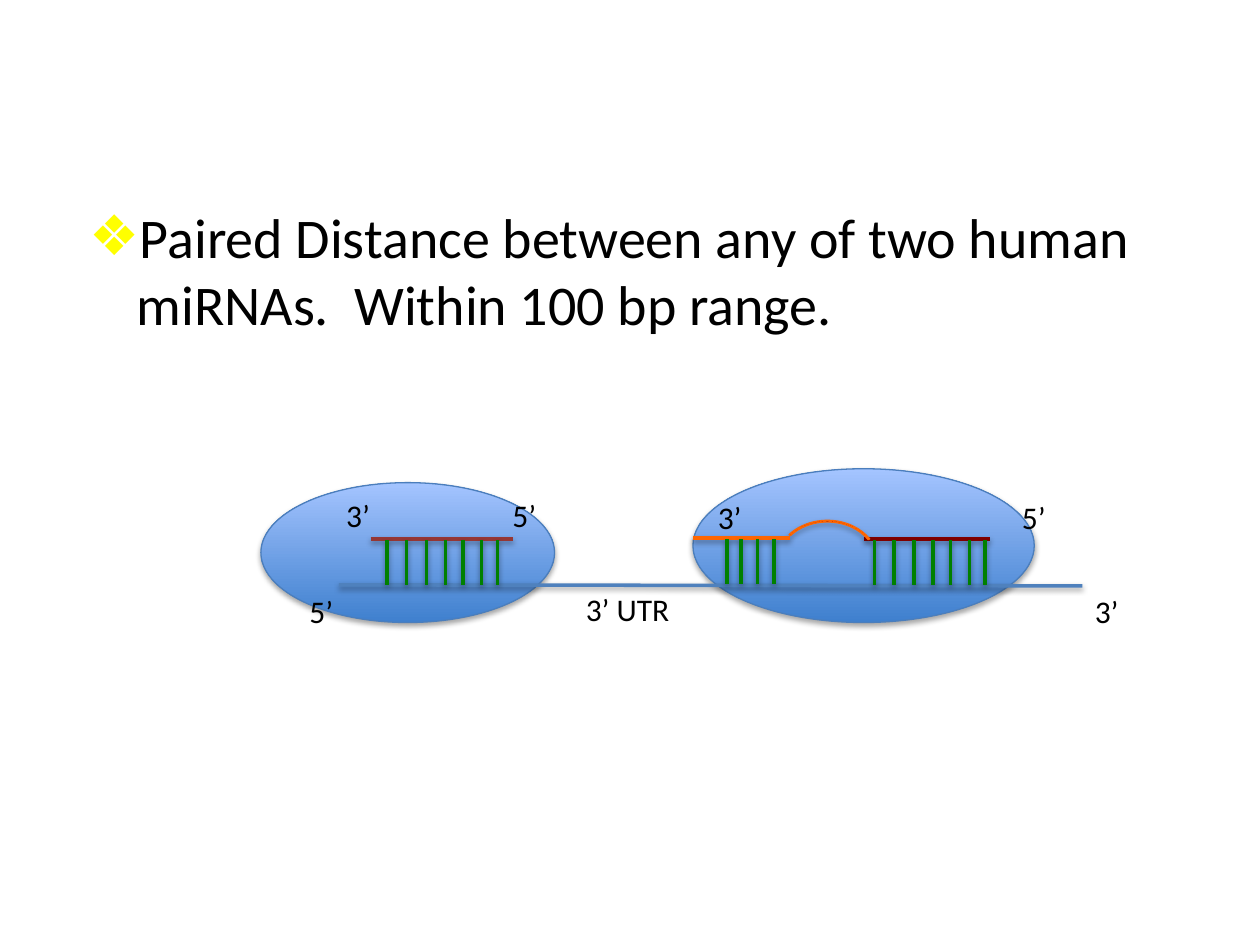
from lxml import etree
from pptx import Presentation
from pptx import util as u
from pptx.dml.color import RGBColor
from pptx.enum import shapes, text
from pptx.oxml import parse_xml
from pptx.oxml.ns import nsdecls, qn

BLACK = RGBColor(0x00, 0x00, 0x00)
OVAL_BOTTOM = RGBColor(0x3F, 0x80, 0xCE)
OVAL_TOP = RGBColor(0xA4, 0xC4, 0xFF)
OVAL_EDGE = RGBColor(0x4B, 0x7E, 0xBC)
UTR_BLUE = RGBColor(0x4F, 0x81, 0xBD)
BROWN = RGBColor(0x95, 0x37, 0x35)
MAROON = RGBColor(0x80, 0x00, 0x00)
ORANGE = RGBColor(0xFF, 0x66, 0x00)
GREEN = RGBColor(0x00, 0x80, 0x00)

FONT = "Calibri"
PAIR_HEIGHT = 0.9
LONG_PAIRING = (0, 0.39, 0.8, 1.18, 1.53, 1.91, 2.23)
SHORT_PAIRING = (0, 0.28, 0.61, 0.94)


def cast_shadow(part, opacity, distance):
    part._element.spPr.append(parse_xml(
        f'<a:effectLst {nsdecls("a")}>'
        f'<a:outerShdw blurRad="40000" dist="{distance}" dir="5400000" rotWithShape="0">'
        f'<a:srgbClr val="000000"><a:alpha val="{opacity}000"/></a:srgbClr>'
        '</a:outerShdw></a:effectLst>'))


def draw_line(slide, start, end, color):
    line = slide.shapes.add_connector(
        shapes.MSO_CONNECTOR.STRAIGHT, *(u.Cm(value) for value in (*start, *end)))
    line.line.color.rgb = color
    line.line.width = u.Pt(2)
    cast_shadow(line, 38, 20000)


def add_run(paragraph, words, size):
    run = paragraph.add_run()
    run.text = words
    run.font.name = FONT
    run.font.size = u.Pt(size)
    run.font.color.rgb = BLACK


def draw_label(slide, left, top, words, width=1.47):
    label = slide.shapes.add_textbox(u.Cm(left), u.Cm(top), u.Cm(width), u.Cm(1.02))
    frame = label.text_frame
    frame.word_wrap = True
    frame.auto_size = text.MSO_AUTO_SIZE.SHAPE_TO_FIT_TEXT
    add_run(frame.paragraphs[0], words, 18)


def write_statement(slide, left, top, width, height):
    statement = slide.placeholders[1]
    statement.left, statement.top = u.Cm(left), u.Cm(top)
    statement.width, statement.height = u.Cm(width), u.Cm(height)
    paragraph = statement.text_frame.paragraphs[0]
    add_run(paragraph, "Paired Distance between any of two human miRNAs.  Within 100 bp range.", 32)
    properties = paragraph._p.get_or_add_pPr()
    properties.set("marL", str(u.Cm(0.95)))
    properties.set("indent", str(u.Cm(-0.95)))
    bullet_color = etree.SubElement(properties, qn("a:buClr"))
    etree.SubElement(bullet_color, qn("a:srgbClr"), val="FFFF00")
    etree.SubElement(properties, qn("a:buChar"), char="❖")


def draw_complex(slide, left, top, width, height):
    oval = slide.shapes.add_shape(
        shapes.MSO_SHAPE.OVAL, u.Cm(left), u.Cm(top), u.Cm(width), u.Cm(height))
    oval.fill.gradient()
    oval.fill.gradient_angle = 90
    for stop, color, position in zip(oval.fill.gradient_stops, (OVAL_BOTTOM, OVAL_TOP), (0, 1)):
        stop.color.rgb = color
        stop.position = position
    oval.line.color.rgb = OVAL_EDGE
    oval.line.width = u.Pt(0.75)
    cast_shadow(oval, 35, 23000)


def draw_utr(slide, left, top, width):
    draw_line(slide, (left, top), (left + width, top + 0.02), UTR_BLUE)
    draw_label(slide, left - 0.84, top + 0.02, "5’")
    draw_label(slide, left + 4.73, top - 0.03, "3’ UTR", 3.1)
    draw_label(slide, left + width, top + 0.02, "3’")


def draw_pairing(slide, left, top, width, color, first_pair, offsets):
    draw_line(slide, (left, top), (left + width, top), color)
    for offset in offsets:
        x = left + first_pair + offset
        draw_line(slide, (x, top + 0.02), (x, top + 0.02 + PAIR_HEIGHT), GREEN)


def draw_bulge(slide, left, top, width, height):
    bulge = slide.shapes.add_shape(
        shapes.MSO_SHAPE.BLOCK_ARC, u.Cm(left), u.Cm(top), u.Cm(width), u.Cm(height))
    for index, value in enumerate((129.66, 198.51, 0.02)):
        bulge.adjustments[index] = value
    bulge.fill.solid()
    bulge.fill.fore_color.rgb = MAROON
    bulge.line.color.rgb = ORANGE
    bulge.line.width = u.Pt(0.75)
    cast_shadow(bulge, 35, 23000)


def draw_first_mirna(slide, left, top, width):
    draw_pairing(slide, left, top, width, BROWN, 0.33, LONG_PAIRING)
    draw_label(slide, left - 0.74, top - 0.99, "3’")
    draw_label(slide, left + width - 0.26, top - 0.99, "5’")


def draw_second_mirna(slide, left, top, width):
    seed_left = left + 3.45
    draw_pairing(slide, seed_left, top, width - 3.45, MAROON, 0.21, LONG_PAIRING)
    draw_label(slide, left + width + 0.39, top - 0.96, "5’")
    draw_label(slide, left + 0.25, top - 0.96, "3’")
    draw_bulge(slide, left + 1.68, top - 0.38, 2.06, 1.7)
    draw_pairing(slide, left, top - 0.02, 1.96, ORANGE, 0.69, SHORT_PAIRING)


def main():
    deck = Presentation()
    deck.slide_width, deck.slide_height = u.Cm(25.4), u.Cm(19.05)
    slide = deck.slides.add_slide(deck.slide_layouts[1])
    empty_title = slide.shapes.title._element
    empty_title.getparent().remove(empty_title)

    draw_complex(slide, 5.26, 9.73, 5.92, 2.82)
    draw_complex(slide, 13.97, 9.45, 6.88, 3.1)
    write_statement(slide, 1.55, 3.96, 22.86, 12.57)
    draw_utr(slide, 6.83, 11.79, 14.99)
    draw_first_mirna(slide, 7.47, 10.87, 2.87)
    draw_second_mirna(slide, 13.97, 10.87, 5.99)

    deck.save("out.pptx")


if __name__ == "__main__":
    main()
